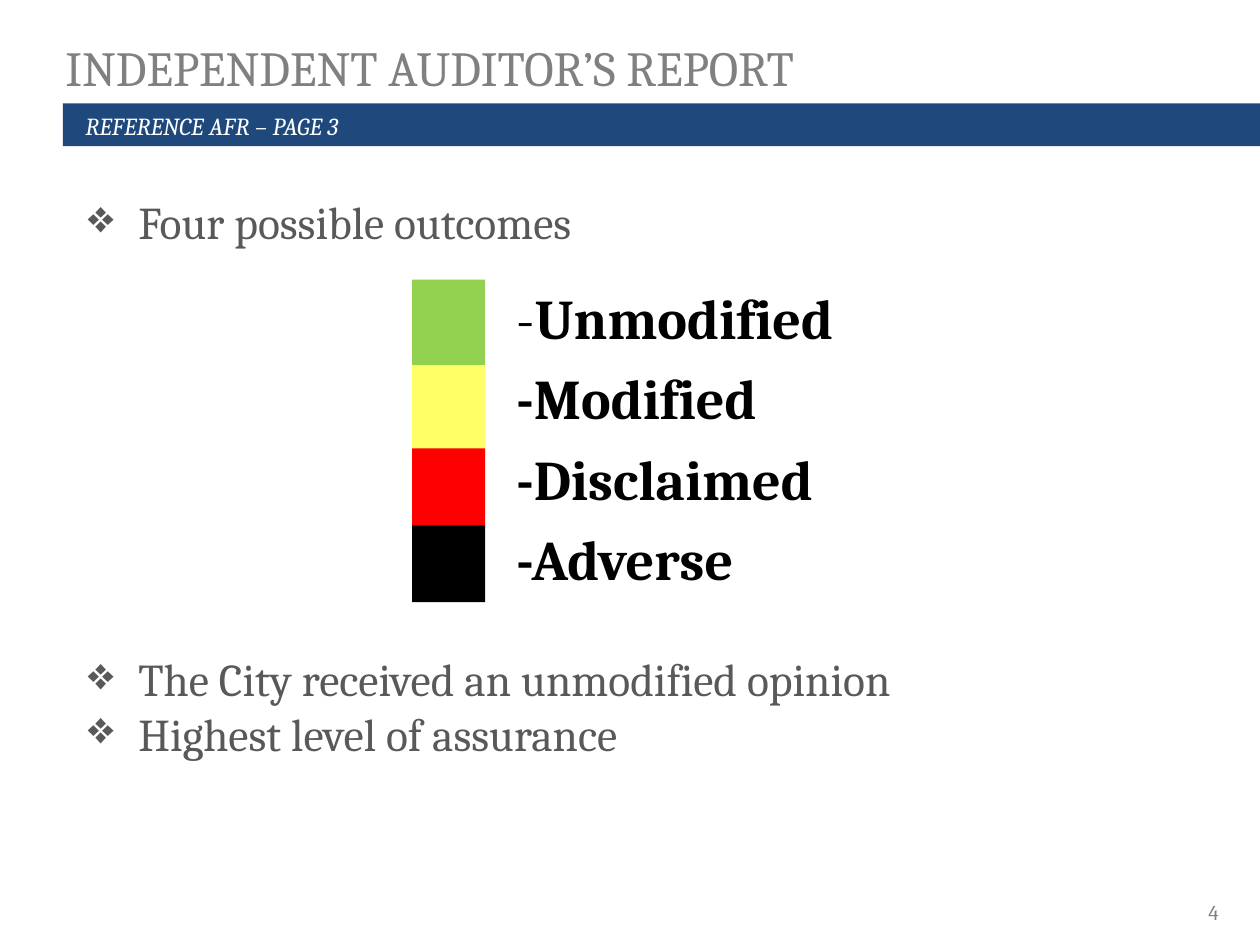
from lxml import etree
from pptx import Presentation
from pptx import util as u
from pptx.dml.color import RGBColor
from pptx.enum import shapes, text
from pptx.oxml.ns import qn

FONT = "Cambria"
GRAY, DARK, NAVY, WHITE, BLACK = "808080", "595959", "1F497D", "FFFFFF", "000000"
HANG = 0.4


def color(value):
    return RGBColor.from_string(value)


def add_rect(s, left, top, width, height, fill):
    sp = s.shapes.add_shape(shapes.MSO_SHAPE.RECTANGLE, *map(u.Inches, (left, top, width, height)))
    sp.shadow.inherit = False
    sp.fill.solid()
    sp.fill.fore_color.rgb = color(fill)
    sp.line.fill.background()


def add_run(p, words, fill, **formats):
    r = p.add_run()
    r.text = words
    r.font.color.rgb = color(fill)
    for name, value in {"name": FONT, **formats}.items():
        setattr(r.font, name, value)


def add_text(s, left, top, width, height):
    tf = s.shapes.add_textbox(*map(u.Inches, (left, top, width, height))).text_frame
    tf.word_wrap = True
    return tf


def add_line(s, box, words, fill, size, align=text.PP_ALIGN.LEFT, **formats):
    p = add_text(s, *box).paragraphs[0]
    p.alignment = align
    add_run(p, words, fill, size=u.Pt(size), **formats)


def next_paragraph(tf, index):
    return tf.add_paragraph() if index else tf.paragraphs[0]


def add_bullets(s, box, items):
    tf = add_text(s, *box)
    for i, item in enumerate(items):
        p = next_paragraph(tf, i)
        pPr = p._p.get_or_add_pPr()
        pPr.set("marL", str(u.Inches(HANG)))
        pPr.set("indent", str(-u.Inches(HANG)))
        etree.SubElement(pPr, qn("a:buChar")).set("char", "❖")
        add_run(p, item, DARK, size=u.Pt(26))


def add_outcomes(s, box, names):
    tf = add_text(s, *box)
    for i, name in enumerate(names):
        p = next_paragraph(tf, i)
        if i:
            p.space_before = u.Pt(7.5)
        # Only the first dash is in regular weight
        add_run(p, "-", BLACK, size=u.Pt(32), bold=i > 0)
        add_run(p, name, BLACK, size=u.Pt(32), bold=True)


def main():
    prs = Presentation()
    prs.slide_width, prs.slide_height = u.Inches(10), u.Inches(7.5)
    s = prs.slides.add_slide(prs.slide_layouts[6])

    # Title, reference band and page number
    add_line(s, (0.42, 0.25, 7.75, 0.57), "INDEPENDENT AUDITOR’S REPORT", GRAY, 28)
    add_rect(s, 0.5, 0.82, 9.5, 0.34, NAVY)
    add_line(s, (0.58, 0.83, 3.33, 0.34), "REFERENCE AFR – PAGE 3", WHITE, 14, italic=True)
    add_line(s, (9.42, 7.09, 0.42, 0.3), "4", GRAY, 12, text.PP_ALIGN.CENTER)

    # Bullets above and below the outcomes
    add_bullets(s, (0.6, 1.49, 7.67, 0.54), ["Four possible outcomes"])
    add_bullets(s, (0.6, 5.12, 7.67, 0.98),
                ["The City received an unmodified opinion", "Highest level of assurance"])

    # Outcomes with their colour scale
    add_outcomes(s, (4, 2.2, 5.5, 2.6), ["Unmodified", "Modified", "Disclaimed", "Adverse"])
    scale = [(2.22, 0.68, "92D050"), (2.9, 0.67, "FFFF66"),
             (3.56, 0.63, "FF0000"), (4.17, 0.61, BLACK)]
    for top, height, fill in scale:
        add_rect(s, 3.27, top, 0.58, height, fill)

    prs.save("out.pptx")


if __name__ == "__main__":
    main()
